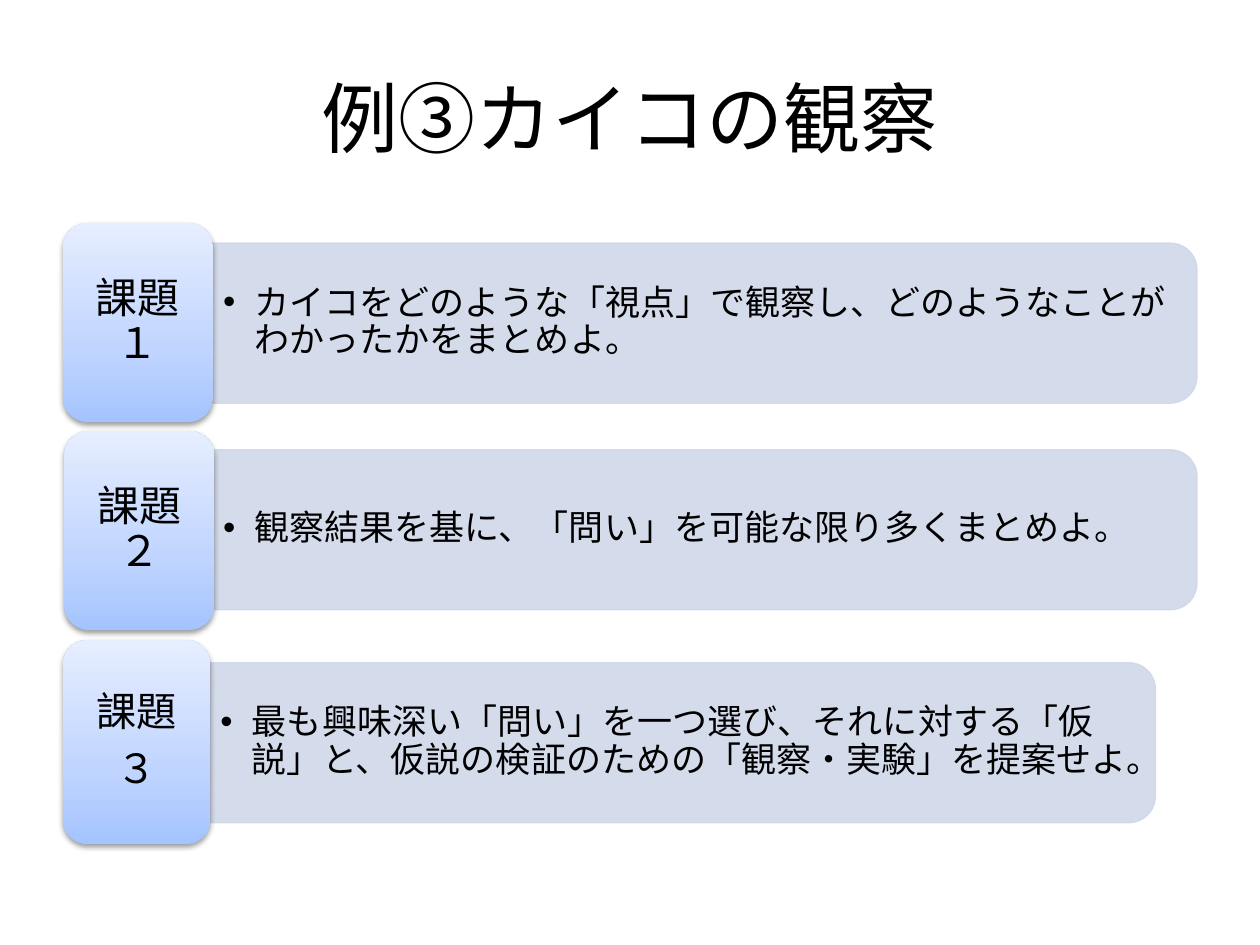
import pptx
import pptx.dml.color
import pptx.enum.shapes
import pptx.enum.text
import pptx.oxml
import pptx.oxml.ns
import pptx.util
from lxml import etree

PX = 9144
FONT = "Cabin"
SHAPE = pptx.enum.shapes.MSO_SHAPE
ALIGN = pptx.enum.text.PP_ALIGN
ANCHOR = pptx.enum.text.MSO_ANCHOR
NS = pptx.oxml.ns.nsdecls("a")
qn = pptx.oxml.ns.qn

BLACK = "000000"
BAR = "D0D8E8"
STOPS = [(0, "A4C4FF"), (35, "BFD4FF"), (100, "E6EEFF")]
TASKS = [
    {"label": (50, 177, 119, 158), "bar": (169, 193, 781, 127),
     "name": ["課題１"], "size": 24,
     "body": "カイコをどのような「視点」で観察し、どのようなことがわかったかをまとめよ。"},
    {"label": (51, 342, 119, 158), "bar": (169, 357, 781, 127),
     "name": ["課題２"], "size": 24,
     "body": "観察結果を基に、「問い」を可能な限り多くまとめよ。"},
    {"label": (50, 508, 117, 162), "bar": (167, 526, 750, 127),
     "name": ["課題", "３"], "size": 23,
     "body": "最も興味深い「問い」を一つ選び、それに対する「仮説」と、"
             "仮説の検証のための「観察・実験」を提案せよ。"},
]


def rgb(value):
    """Turn a hex string into a colour."""
    return pptx.dml.color.RGBColor.from_string(value)


def emu(*lengths):
    """Turn px lengths into EMU."""
    return [pptx.util.Emu(round(n * PX)) for n in lengths]


def assign(obj, values):
    """Set attributes of an object from a dict."""
    for name, value in values.items():
        setattr(obj, name, value)


def add_text(s, box, lines, size, para, inset=(10, 5)):
    """Add a wrapped, vertically centred text box and return its paragraphs."""
    tf = s.shapes.add_textbox(*emu(*box)).text_frame
    dx, dy = emu(*inset)
    assign(tf, {"word_wrap": True, "vertical_anchor": ANCHOR.MIDDLE,
                "margin_left": dx, "margin_right": dx,
                "margin_top": dy, "margin_bottom": dy})
    for i, line in enumerate(lines):
        p = tf.add_paragraph() if i else tf.paragraphs[0]
        assign(p, para)
        r = p.add_run()
        r.text = line
        assign(r.font, {"size": pptx.util.Pt(size), "name": FONT})
        r.font.color.rgb = rgb(BLACK)
    return tf.paragraphs


def add_title(s, box, text):
    """Place the slide title."""
    add_text(s, box, [text], 44, {"alignment": ALIGN.CENTER})


def add_bar(s, box, text):
    """Place a bar rounded on its right side, with one bulleted paragraph."""
    x, y, w, h = box
    left, top = x + (w - h) / 2, y + (h - w) / 2
    sp = s.shapes.add_shape(SHAPE.ROUND_2_SAME_RECTANGLE, *emu(left, top, h, w))
    sp.rotation = 90
    sp.shadow.inherit = False
    sp.line.width = pptx.util.Pt(0.75)
    for fill in (sp.fill, sp.line.fill):
        fill.solid()
        fill.fore_color.rgb = rgb(BAR)
    for clr in sp._element.spPr.iter(qn("a:srgbClr")):
        etree.SubElement(clr, qn("a:alpha"), val="90000")
    p, = add_text(s, (x, y + 6, w - 6, h - 13), [text], 20,
                  {"alignment": ALIGN.LEFT, "line_spacing": 0.9,
                   "space_after": pptx.util.Pt(3)}, inset=(8, 4))
    pPr = p._p.get_or_add_pPr()
    indent, = emu(25)
    pPr.set("marL", str(indent))
    pPr.set("indent", str(-indent))
    etree.SubElement(pPr, qn("a:buFont"), typeface="Arial")
    etree.SubElement(pPr, qn("a:buChar"), char="•")


def add_label(s, box, lines, size):
    """Place a shaded rounded card with the task name."""
    x, y, w, h = box
    sp = s.shapes.add_shape(SHAPE.ROUNDED_RECTANGLE, *emu(*box))
    sp.line.fill.background()
    sp.fill.gradient()
    sp.fill.gradient_angle = 90
    spPr = sp._element.spPr
    stops = spPr.find(qn("a:gradFill")).find(qn("a:gsLst"))
    for stop in list(stops):
        stops.remove(stop)
    for pos, color in STOPS:
        gs = etree.SubElement(stops, qn("a:gs"), pos=str(pos * 1000))
        etree.SubElement(gs, qn("a:srgbClr"), val=color)
    sp.shadow.inherit = False
    spPr.find(qn("a:effectLst")).append(pptx.oxml.parse_xml(
        f'<a:outerShdw {NS} blurRad="40000" dist="20000" dir="5400000" rotWithShape="0">'
        f'<a:srgbClr val="{BLACK}"><a:alpha val="38000"/></a:srgbClr></a:outerShdw>'))
    add_text(s, (x + 6, y + 6, w - 12, h - 12), lines, size,
             {"alignment": ALIGN.CENTER, "line_spacing": 0.9,
              "space_after": pptx.util.Pt(8)})


def main():
    """Build and save the slide."""
    prs = pptx.Presentation()
    prs.slide_width, prs.slide_height = emu(1000, 750)
    s = prs.slides.add_slide(prs.slide_layouts[6])
    add_title(s, (50, 30, 900, 125), "例③カイコの観察")
    for task in TASKS:
        add_bar(s, task["bar"], task["body"])
        add_label(s, task["label"], task["name"], task["size"])
    prs.save("out.pptx")


if __name__ == "__main__":
    main()
